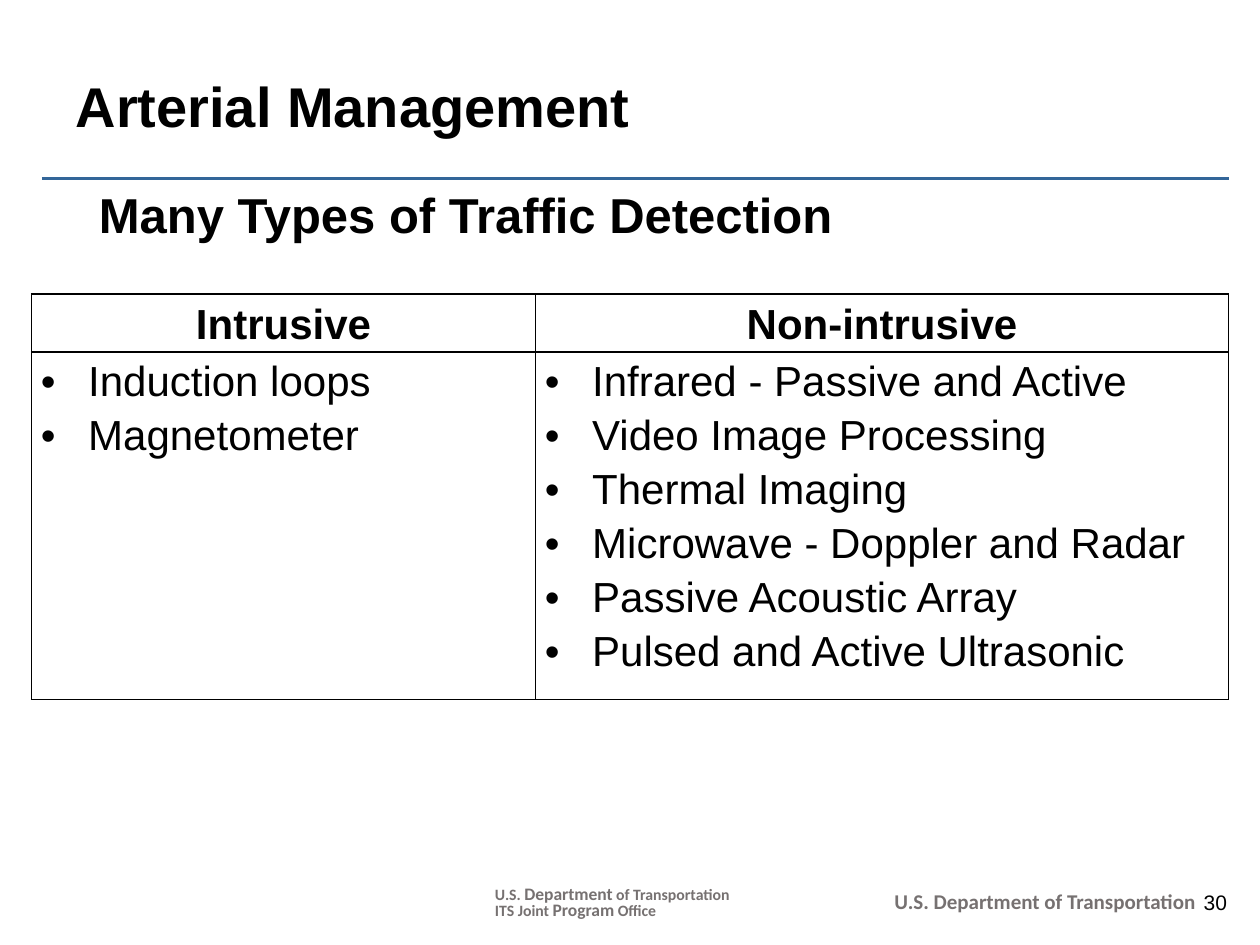
import pptx
import pptx.util
import pptx.dml.color
import pptx.enum.shapes
import pptx.enum.text
import pptx.oxml.ns
from lxml import etree

Pt = pptx.util.Pt
ALIGN = pptx.enum.text.PP_ALIGN
ANCHOR = pptx.enum.text.MSO_ANCHOR
COLORS = {"text": "000000", "footer": "767171", "rule": "336699", "border": "000000"}
BODY = {"name": "Arial", "size": Pt(24), "bold": False}
HEADING = {**BODY, "bold": True}
FOOTER = {"name": "Calibri", "size": Pt(9), "bold": True}


def add_run(paragraph, text, font, color="text"):
    run = paragraph.add_run()
    run.text = text
    for attribute, value in font.items():
        setattr(run.font, attribute, value)
    run.font.color.rgb = pptx.dml.color.RGBColor.from_string(COLORS[color])


def add_element(parent, tag, **attributes):
    return etree.SubElement(parent, pptx.oxml.ns.qn(tag), attributes)


presentation = pptx.Presentation()
presentation.slide_width, presentation.slide_height = Pt(720), Pt(540)
slide = presentation.slides.add_slide(presentation.slide_layouts[5])

# Rule under the title
rule = slide.shapes.add_connector(
    pptx.enum.shapes.MSO_CONNECTOR.STRAIGHT, Pt(24), Pt(102), Pt(702), Pt(102))
rule.line.color.rgb = pptx.dml.color.RGBColor.from_string(COLORS["rule"])
rule.line.width = Pt(1.5)
add_element(rule._element.spPr, "a:effectLst")

# Title
title = slide.shapes.title
title_format = {"left": Pt(36), "top": Pt(30), "width": Pt(648), "height": Pt(60)}
for attribute, value in title_format.items():
    setattr(title, attribute, value)
title.text_frame.auto_size = pptx.enum.text.MSO_AUTO_SIZE.NONE
title.text_frame.vertical_anchor = ANCHOR.MIDDLE
title_line = title.text_frame.paragraphs[0]
title_line.alignment = ALIGN.LEFT
add_run(title_line, "Arterial Management", {**HEADING, "size": Pt(32)})

# Subtitle and footers: place, paragraph format, colour, lines of (text, font)
tight = {"line_spacing": Pt(9)}
emphasis = {**FOOTER, "size": Pt(10)}
texts = [
    ((36, 102, 648, 40), {}, "text",
     [[("Many Types of Traffic Detection", {**HEADING, "size": Pt(28)})]]),
    ((678, 504.72, 30.24, 21.6), {"alignment": ALIGN.RIGHT}, "text",
     [[("30", {**BODY, "size": Pt(12)})]]),
    ((504, 509.76, 198, 17.28), tight, "footer",
     [[("U.S. Department of Transportation", {**FOOTER, "size": Pt(12)})]]),
    ((275.76, 504, 149.04, 25.92), tight, "footer",
     [[("U.S. ", FOOTER), ("Department", emphasis), (" of Transportation", FOOTER)],
      [("ITS Joint ", FOOTER), ("Program", emphasis), (" Office", FOOTER)]]),
]
for place, paragraph_format, color, lines in texts:
    frame = slide.shapes.add_textbox(*map(Pt, place)).text_frame
    frame.word_wrap = True
    for index, line in enumerate(lines):
        paragraph = frame.add_paragraph() if index else frame.paragraphs[0]
        for attribute, value in paragraph_format.items():
            setattr(paragraph, attribute, value)
        for text, font in line:
            add_run(paragraph, text, font, color)
        if place[1] == 102:
            paragraph._p.get_or_add_pPr().set("marL", str(Pt(13.5)))

# Detection table
detectors = {
    "Intrusive": ["Induction loops", "Magnetometer"],
    "Non-intrusive": [
        "Infrared - Passive and Active", "Video Image Processing", "Thermal Imaging",
        "Microwave - Doppler and Radar", "Passive Acoustic Array",
        "Pulsed and Active Ultrasonic"],
}
table = slide.shapes.add_table(2, 2, Pt(18), Pt(168), Pt(684), Pt(219)).table
table.first_row = table.horz_banding = False
for column, width in zip(table.columns, (288, 396)):
    column.width = Pt(width)
for row, height in zip(table.rows, (31, 188)):
    row.height = Pt(height)

cell_format = {"margin_left": Pt(5.4), "margin_right": Pt(5.4),
               "margin_top": 0, "margin_bottom": 0, "vertical_anchor": ANCHOR.TOP}
for column, (heading, items) in enumerate(detectors.items()):
    for row, entries in enumerate(([heading], items)):
        cell = table.cell(row, column)
        for attribute, value in cell_format.items():
            setattr(cell, attribute, value)
        for side in ("a:lnL", "a:lnR", "a:lnT", "a:lnB"):
            border = add_element(cell._tc.get_or_add_tcPr(), side, w=str(Pt(1)))
            add_element(add_element(border, "a:solidFill"), "a:srgbClr", val=COLORS["border"])
        cell.fill.background()
        for index, entry in enumerate(entries):
            frame = cell.text_frame
            paragraph = frame.add_paragraph() if index else frame.paragraphs[0]
            paragraph.line_spacing = 1.15
            if row == 0:
                paragraph.alignment = ALIGN.CENTER
            else:
                properties = paragraph._p.get_or_add_pPr()
                properties.set("marL", str(Pt(27)))
                properties.set("indent", str(-Pt(27)))
                add_element(properties, "a:buFont", typeface="Arial")
                add_element(properties, "a:buChar", char="•")
            add_run(paragraph, entry, BODY if row else HEADING)

presentation.save("out.pptx")
